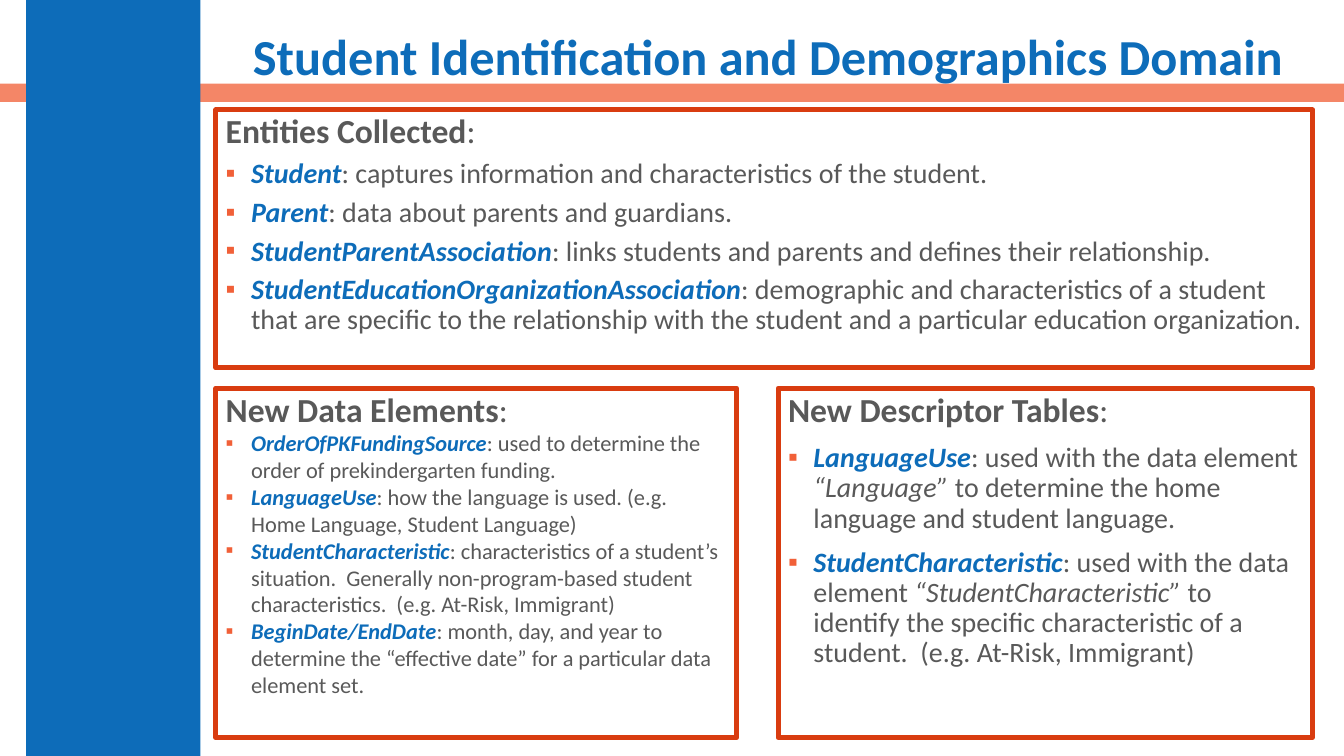
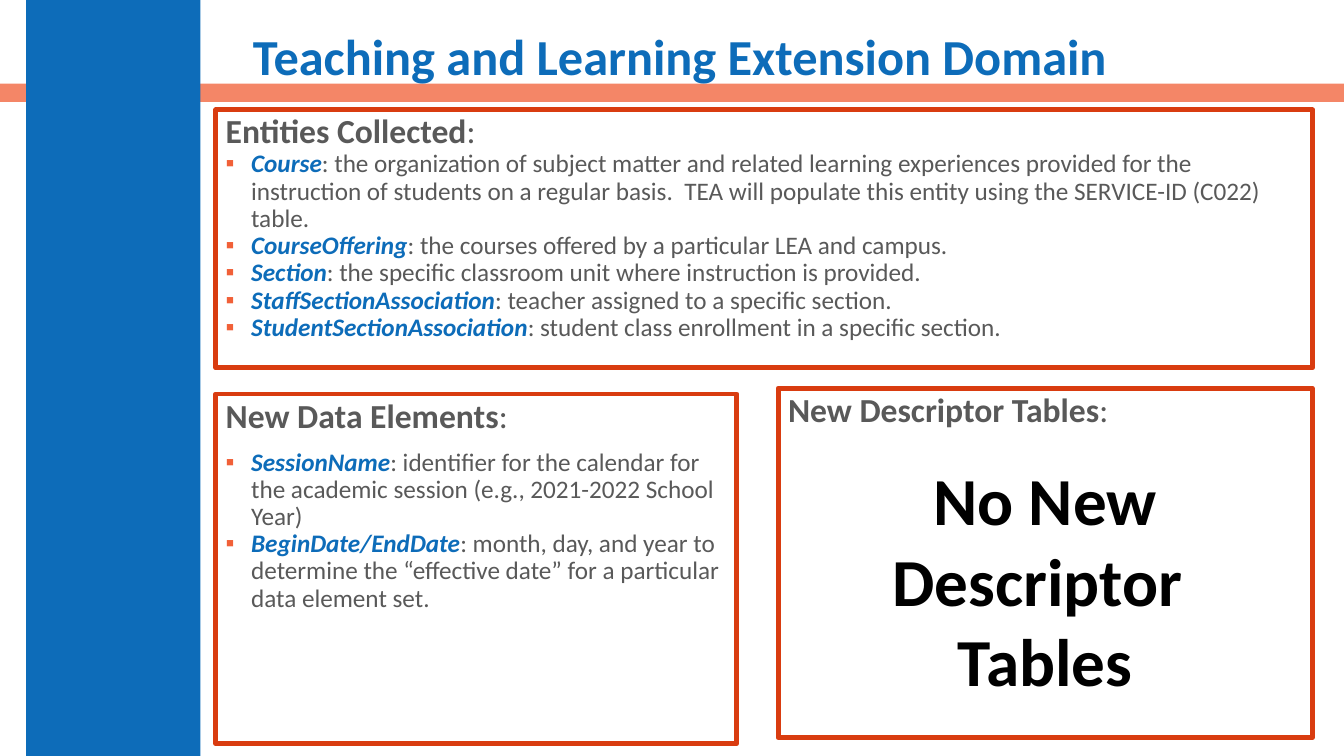
from lxml import etree
from pptx import Presentation
from pptx import util as u
from pptx.dml import color
from pptx.enum import shapes, text
from pptx.oxml import ns

FONT = "Calibri"
BLUE, ORANGE, RED = "0D6CB9", "F16038", "D93C10"
GRAY, BLACK = "595959", "000000"

# Regions in centimetres: left, top, width, height
PAGE_WIDTH, PAGE_HEIGHT = 33.87, 19.05
STRIPE = (0, 2.11, PAGE_WIDTH, 0.46)
SIDEBAR = (0.66, 0, 4.39, PAGE_HEIGHT)
TITLE = (6.12, 0.46, 26.75, 2.08)
ENTITIES = (5.44, 2.77, 27.64, 6.5)
ELEMENTS = (5.44, 9.78, 13.13, 8.81)
LOW_ELEMENTS = (5.44, 9.93, 13.13, 8.81)
DESCRIPTORS = (19.61, 9.78, 13.46, 8.81)


def rgb(value):
    return color.RGBColor.from_string(value)


def lengths(region):
    return [u.Cm(value) for value in region]


def add_span(para, words, size, tint=GRAY, bold=False, italic=False):
    span = para.add_run()
    span.text = words
    font = span.font
    font.name, font.size = FONT, u.Pt(size)
    font.bold, font.italic = bold, italic
    font.color.rgb = rgb(tint)


def add_para(frame, first=False, align=text.PP_ALIGN.LEFT, spacing=0.9, before=0):
    para = frame.paragraphs[0] if first else frame.add_paragraph()
    para.alignment = align
    para.line_spacing = spacing
    para.space_before = u.Pt(before)
    return para


def add_bullet(para):
    """Give the paragraph a square bullet with a hanging indent."""
    props = para._p.get_or_add_pPr()
    indent = u.Cm(0.64)
    props.set("marL", str(indent))
    props.set("indent", str(-indent))
    tint = etree.SubElement(props, ns.qn("a:buClr"))
    etree.SubElement(tint, ns.qn("a:srgbClr"), val=ORANGE)
    etree.SubElement(props, ns.qn("a:buFont"), typeface="Arial")
    etree.SubElement(props, ns.qn("a:buChar"), char="▪")


def add_box(page, region, fill=None, line=None, alpha=None):
    box = page.shapes.add_shape(shapes.MSO_SHAPE.RECTANGLE, *lengths(region))
    box.shadow.inherit = False
    if fill:
        box.fill.solid()
        box.fill.fore_color.rgb = rgb(fill)
    else:
        box.fill.background()
    if line:
        box.line.color.rgb = rgb(line)
        box.line.width = u.Pt(3.5)
    else:
        box.line.fill.background()
    if alpha:
        tint = box._element.spPr.find(ns.qn("a:solidFill"))[0]
        etree.SubElement(tint, ns.qn("a:alpha"), val=str(alpha * 1000))
    return box


def add_page(deck, heading):
    """Start a page with the bands behind its title."""
    page = deck.slides.add_slide(deck.slide_layouts[5])
    add_box(page, STRIPE, fill=ORANGE, alpha=76)
    add_box(page, SIDEBAR, fill=BLUE)
    title = page.shapes.title
    page.shapes._spTree.append(title._element)
    title.left, title.top, title.width, title.height = lengths(TITLE)
    frame = title.text_frame
    frame.auto_size = text.MSO_AUTO_SIZE.NONE
    frame.vertical_anchor = text.MSO_ANCHOR.MIDDLE
    add_span(add_para(frame, first=True), heading, 36, BLUE, bold=True)
    return page


def add_panel(page, region, heading, items=(), size=20, spacing=0.9, gap=0, first_gap=None):
    """Framed list; an item is a term, then plain and italic words in turn."""
    frame = add_box(page, region, line=RED).text_frame
    frame.word_wrap = True
    frame.vertical_anchor = text.MSO_ANCHOR.TOP
    para = add_para(frame, first=True)
    add_span(para, heading, 24, bold=True)
    add_span(para, ":", 24)
    for index, (term, *parts) in enumerate(items):
        before = first_gap if index == 0 and first_gap is not None else gap
        para = add_para(frame, spacing=spacing, before=before)
        add_bullet(para)
        add_span(para, term, size, BLUE, bold=True, italic=True)
        for position, words in enumerate(parts):
            add_span(para, words, size, italic=position % 2 == 1)


def add_notice(page, region, lines):
    """Large centred statement inside a panel."""
    left, top, width, height = region
    notice = (left + 2.59, top + 1.65, width - 5.18, height - 2.41)
    frame = page.shapes.add_textbox(*lengths(notice)).text_frame
    frame.word_wrap = False
    for index, words in enumerate(lines):
        para = add_para(frame, first=index == 0, align=text.PP_ALIGN.CENTER, spacing=1.0)
        add_span(para, words, 48, BLACK, bold=True)


DATES = ("BeginDate/EndDate", ": month, day, and year to determine the “effective date” "
         "for a particular data element set.")


def build_student_page(deck):
    page = add_page(deck, "Student Identification and Demographics Domain")
    add_panel(page, ENTITIES, "Entities Collected", [
        ("Student", ": captures information and characteristics of the student."),
        ("Parent", ": data about parents and guardians."),
        ("StudentParentAssociation",
         ": links students and parents and defines their relationship."),
        ("StudentEducationOrganizationAssociation",
         ": demographic and characteristics of a student that are specific to the "
         "relationship with the student and a particular education organization."),
    ], gap=6)
    add_panel(page, ELEMENTS, "New Data Elements", [
        ("OrderOfPKFundingSource",
         ": used to determine the order of prekindergarten funding."),
        ("LanguageUse",
         ": how the language is used. (e.g. Home Language, Student Language)"),
        ("StudentCharacteristic",
         ": characteristics of a student’s situation.  Generally non-program-based "
         "student characteristics.  (e.g. At-Risk, Immigrant)"),
        DATES,
    ], size=16, spacing=1.0)
    add_panel(page, DESCRIPTORS, "New Descriptor Tables", [
        ("LanguageUse", ": used with the data element ", "“Language”",
         " to determine the home language and student language."),
        ("StudentCharacteristic", ": used with the data element ",
         "“StudentCharacteristic” ",
         "to identify the specific characteristic of a student.  "
         "(e.g. At-Risk, Immigrant)"),
    ], gap=10)


def build_teaching_page(deck):
    page = add_page(deck, "Teaching and Learning Extension Domain")
    add_panel(page, ENTITIES, "Entities Collected", [
        ("Course",
         ": the organization of subject matter and related learning experiences "
         "provided for the instruction of students on a regular basis.  TEA will "
         "populate this entity using the SERVICE-ID (C022) table."),
        ("CourseOffering", ": the courses offered by a particular LEA and campus."),
        ("Section", ": the specific classroom unit where instruction is provided."),
        ("StaffSectionAssociation", ": teacher assigned to a specific section."),
        ("StudentSectionAssociation",
         ": student class enrollment in a specific section."),
    ], size=18)
    add_panel(page, LOW_ELEMENTS, "New Data Elements", [
        ("SessionName", ": identifier for the calendar for the academic session "
         "(e.g., 2021-2022 School Year)"),
        DATES,
    ], size=18, first_gap=10)
    add_panel(page, DESCRIPTORS, "New Descriptor Tables")
    add_notice(page, DESCRIPTORS, ["No New", "Descriptor ", "Tables"])


def main():
    deck = Presentation()
    deck.slide_width, deck.slide_height = u.Cm(PAGE_WIDTH), u.Cm(PAGE_HEIGHT)
    build_student_page(deck)
    build_teaching_page(deck)
    deck.save("out.pptx")


if __name__ == "__main__":
    main()
